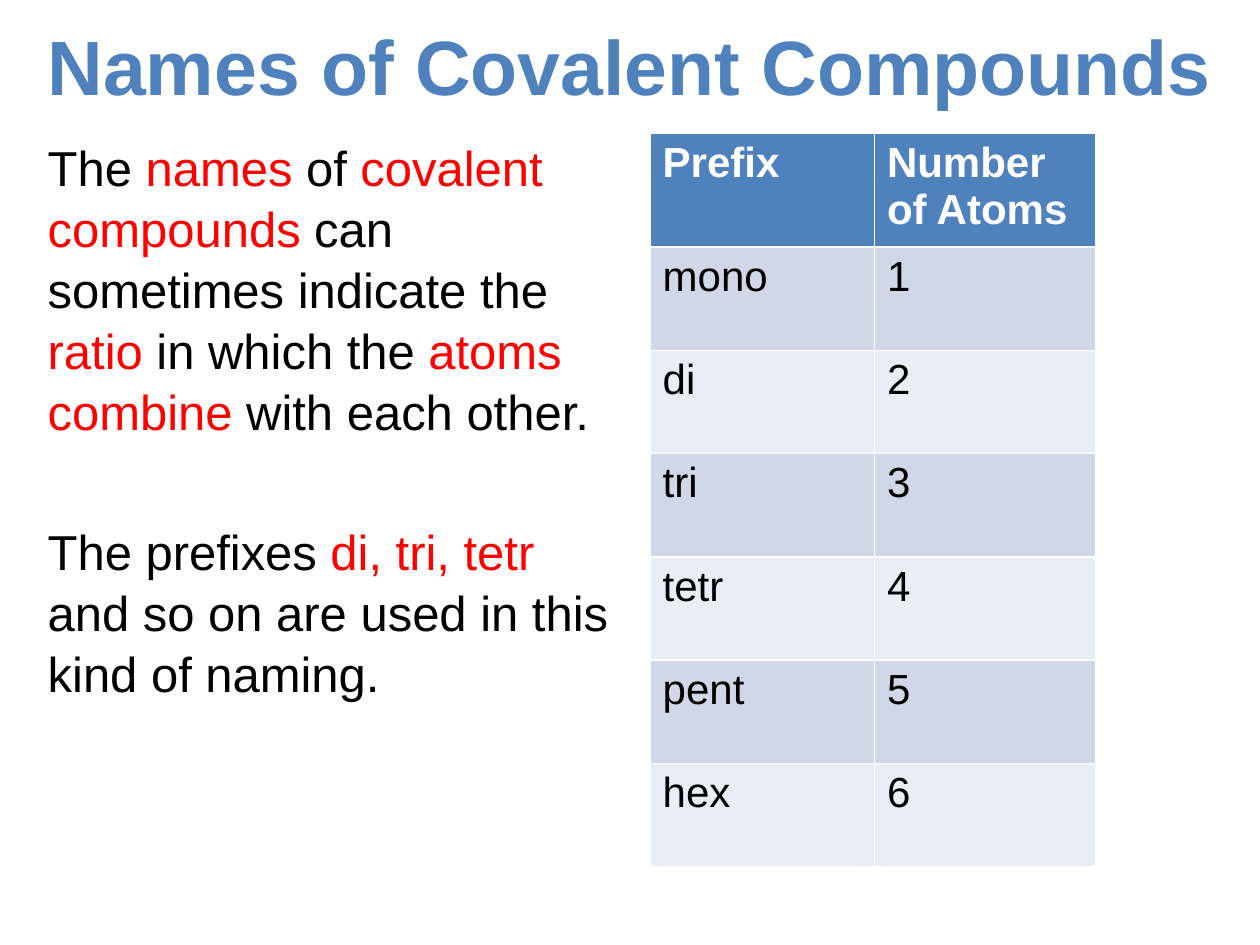
import pptx
import pptx.util
import pptx.dml.color
import pptx.enum.text

Inches, Pt = pptx.util.Inches, pptx.util.Pt


def paint(code):
    return pptx.dml.color.RGBColor.from_string(code)


def write(para, text, size=28, color="000000", bold=False):
    run = para.add_run()
    run.text = text
    run.font.name = "Arial"
    run.font.size = Pt(size)
    run.font.bold = bold
    run.font.color.rgb = paint(color)


deck = pptx.Presentation()
deck.slide_width, deck.slide_height = Inches(10), Inches(7.5)
slide = deck.slides.add_slide(deck.slide_layouts[6])

box = slide.shapes.add_textbox(Inches(0.2), Inches(0.02), Inches(9.6), Inches(0.98))
title = box.text_frame
title.word_wrap = True
title.vertical_anchor = pptx.enum.text.MSO_ANCHOR.MIDDLE
title.paragraphs[0].alignment = pptx.enum.text.PP_ALIGN.CENTER
write(title.paragraphs[0], "Names of Covalent Compounds", size=44, color="4F81BD", bold=True)

box = slide.shapes.add_textbox(Inches(0.28), Inches(1.02), Inches(4.72), Inches(6.27))
body = box.text_frame
body.word_wrap = True
first, second = body.paragraphs[0], body.add_paragraph()
second.space_before = Pt(45)
black, red = "000000", "FF0000"
parts = [
    (first, "The ", black),
    (first, "names ", red),
    (first, "of ", black),
    (first, "covalent compounds ", red),
    (first, "can sometimes indicate the ", black),
    (first, "ratio", red),
    (first, " in which the ", black),
    (first, "atoms combine ", red),
    (first, "with each other.", black),
    (second, "The prefixes ", black),
    (second, "di, tri, tetr ", red),
    (second, "and so on are used in this kind of naming.", black),
]
for para, text, color in parts:
    para.line_spacing = 1.04
    write(para, text, color=color)

rows = [("Prefix", "Number of Atoms")]
for count, prefix in enumerate(["mono", "di", "tri", "tetr", "pent", "hex"], 1):
    rows.append((prefix, str(count)))

high = Inches(0.82)
frame = slide.shapes.add_table(
    len(rows), 2, Inches(5.16), Inches(1.06), Inches(3.54), high * len(rows)
)
table = frame.table
table.columns[0].width, table.columns[1].width = Inches(1.78), Inches(1.76)
for r, row in enumerate(rows):
    table.rows[r].height = high
    head = r == 0
    fill = "4F81BD" if head else ("E9EDF4", "D0D8E8")[r % 2]
    for c, text in enumerate(row):
        cell = table.cell(r, c)
        cell.fill.solid()
        cell.fill.fore_color.rgb = paint(fill)
        para = cell.text_frame.paragraphs[0]
        write(para, text, size=24, color="FFFFFF" if head else black, bold=head)

deck.save("out.pptx")
